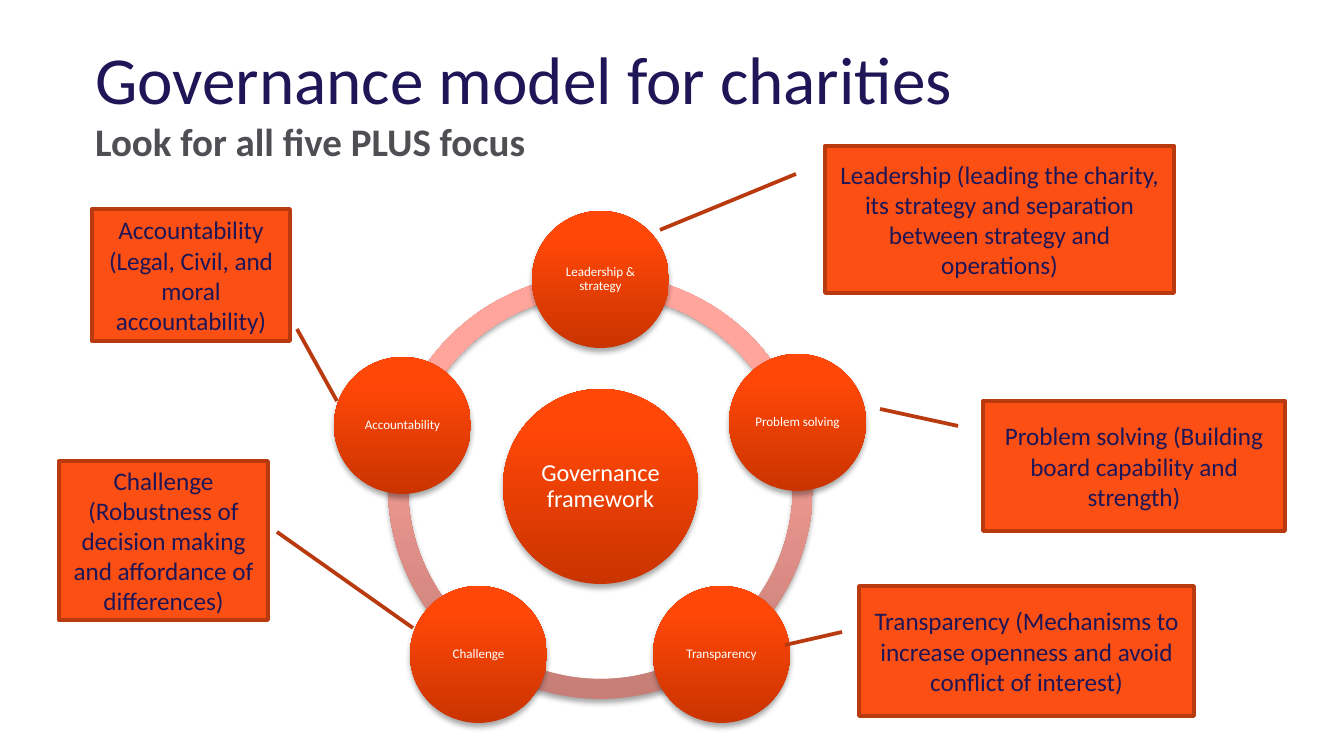
"""Build the charity governance slide: a ring of five circles with callouts."""
from copy import deepcopy
from dataclasses import dataclass

from lxml import etree
from pptx import Presentation
from pptx.dml.color import RGBColor
from pptx.enum.shapes import MSO_SHAPE
from pptx.enum.text import MSO_ANCHOR, PP_ALIGN
from pptx.oxml.ns import qn
from pptx.shapes.autoshape import Shape
from pptx.slide import Slide
from pptx.text.text import TextFrame, _Paragraph
from pptx.util import Emu, Pt

ARC = MSO_SHAPE.BLOCK_ARC
OVAL = MSO_SHAPE.OVAL
CALLOUT = MSO_SHAPE.LINE_CALLOUT_1
MIDDLE = MSO_ANCHOR.MIDDLE
LEFT = PP_ALIGN.LEFT
CENTER = PP_ALIGN.CENTER

SCALE = 914400 / 134.4
WIDE, HIGH = 1344, 756
MID_X, MID_Y = 600, 486
RING, BAND = 425, 20
HUB, NODE = 195, 137
STEP = 72


@dataclass(frozen=True)
class Theme:
    """Colours and type sizes of the slide."""
    font: str = "Calibri"
    navy: str = "1E1656"
    grey: str = "4D4F53"
    white: str = "FFFFFF"
    black: str = "000000"
    orange: str = "FB4F14"
    rust: str = "BA3A0F"
    ball: tuple[str, ...] = ("CA3400", "FF4708", "FF4809")
    band: tuple[str, ...] = ("C67E77", "FFA59C", "FFA69E")
    stops: tuple[float, ...] = (0, 0.8, 1)
    title: float = 36
    lead: float = 20.9
    hub: float = 13
    node: float = 7
    note: float = 13.5
    edge: float = 2


@dataclass(frozen=True)
class Ball:
    """A circle given by its centre, width and label."""
    x: int
    y: int
    size: int
    text: str
    type: float


@dataclass(frozen=True)
class Note:
    """A callout box whose line runs from start to tip."""
    box: tuple[int, int, int, int]
    start: tuple[int, int]
    tip: tuple[int, int]
    text: str


THEME = Theme()

BALLS = (
    Ball(MID_X, MID_Y, HUB, "Governance framework", THEME.hub),
    Ball(600, 279, NODE, "Leadership & strategy", THEME.node),
    Ball(797, 422, NODE, "Problem solving", THEME.node),
    Ball(721, 654, NODE, "Transparency", THEME.node),
    Ball(478, 654, NODE, "Challenge", THEME.node),
    Ball(402, 425, NODE, "Accountability", THEME.node),
)

NOTES = (
    Note((825, 146, 349, 147), (796, 174), (660, 230),
         "Leadership (leading the charity, its strategy and separation "
         "between strategy and operations)"),
    Note((983, 401, 302, 130), (958, 426), (880, 409),
         "Problem solving (Building board capability and strength)"),
    Note((859, 586, 335, 130), (842, 632), (785, 645),
         "Transparency (Mechanisms to increase openness and avoid "
         "conflict of interest)"),
    Note((59, 461, 209, 159), (277, 532), (413, 628),
         "Challenge (Robustness of decision making and affordance of "
         "differences)"),
    Note((92, 209, 198, 132), (297, 329), (337, 401),
         "Accountability (Legal, Civil, and moral accountability)"),
)


def px(count: int) -> Emu:
    """Turn pixels into EMU."""
    return Emu(round(count * SCALE))


def color(code: str) -> RGBColor:
    """Read a hex colour."""
    return RGBColor.from_string(code)


def write(para: _Paragraph, text: str, *, size: float, ink: str,
          bold: bool = False, align: PP_ALIGN = CENTER,
          lines: float = 1.0) -> None:
    """Add one run of text with its format."""
    para.alignment = align
    para.line_spacing = lines
    run = para.add_run()
    run.text = text
    run.font.name = THEME.font
    run.font.size = Pt(size)
    run.font.bold = bold
    run.font.color.rgb = color(ink)


def frame(shape: Shape) -> TextFrame:
    """Return the wrapped, centred text frame of a shape."""
    text = shape.text_frame
    text.word_wrap = True
    text.vertical_anchor = MIDDLE
    return text


def place(slide: Slide, kind: MSO_SHAPE, box: tuple[int, ...]) -> Shape:
    """Add a preset shape without shadow."""
    shape = slide.shapes.add_shape(kind, *map(px, box))
    shape.shadow.inherit = False
    return shape


def gloss(shape: Shape, tones: tuple[str, ...]) -> None:
    """Give a shape a rising gradient and a soft shadow."""
    shape.line.fill.background()
    shape.fill.gradient()
    shape.fill.gradient_angle = 90
    props = shape._element.spPr
    stops = props.find(".//" + qn("a:gsLst"))
    stops.append(deepcopy(stops[-1]))
    for stop, spot, tone in zip(shape.fill.gradient_stops, THEME.stops, tones):
        stop.position = spot
        stop.color.rgb = color(tone)
    shade = etree.SubElement(
        props.find(qn("a:effectLst")), qn("a:outerShdw"),
        blurRad=str(Pt(3.1)), dist=str(Pt(1.8)), dir="5400000", rotWithShape="0")
    tint = etree.SubElement(shade, qn("a:srgbClr"), val=THEME.black)
    etree.SubElement(tint, qn("a:alpha"), val="35000")


def draw_ring(slide: Slide) -> None:
    """Draw the five arcs that join the circles."""
    half = RING // 2
    for turn in range(0, 360, STEP):
        arc = place(slide, ARC, (MID_X - half, MID_Y - half, RING, RING))
        ends = (270 + turn) % 360, (270 + turn + STEP) % 360
        arc.adjustments[0], arc.adjustments[1] = (end * 0.6 for end in ends)
        arc.adjustments[2] = BAND / RING
        gloss(arc, THEME.band)


def draw_ball(slide: Slide, ball: Ball) -> None:
    """Draw a labelled circle."""
    half = ball.size // 2
    shape = place(slide, OVAL,
                  (ball.x - half, ball.y - half, ball.size, ball.size))
    gloss(shape, THEME.ball)
    text = frame(shape)
    text.margin_left = text.margin_right = px(2)
    text.margin_top = text.margin_bottom = px(2)
    write(text.paragraphs[0], ball.text, size=ball.type, ink=THEME.white,
          lines=0.9)


def draw_note(slide: Slide, note: Note) -> None:
    """Draw a callout box with its line."""
    shape = place(slide, CALLOUT, note.box)
    left, top, width, height = note.box
    for i, (x, y) in enumerate((note.start, note.tip)):
        shape.adjustments[2 * i] = (y - top) / height
        shape.adjustments[2 * i + 1] = (x - left) / width
    shape.fill.solid()
    shape.fill.fore_color.rgb = color(THEME.orange)
    shape.line.color.rgb = color(THEME.rust)
    shape.line.width = Pt(THEME.edge)
    write(frame(shape).paragraphs[0], note.text, size=THEME.note,
          ink=THEME.navy)


def draw_title(slide: Slide) -> None:
    """Write the title and the line below it."""
    box = slide.shapes.add_textbox(*map(px, (82, 28, 1161, 146)))
    para = frame(box).paragraphs[0]
    write(para, "Governance model for charities", size=THEME.title,
          ink=THEME.navy, align=LEFT)
    para.add_line_break()
    write(para, "Look for all five PLUS focus", size=THEME.lead,
          ink=THEME.grey, bold=True, align=LEFT)


def main() -> None:
    """Build and save the slide."""
    deck = Presentation()
    deck.slide_width, deck.slide_height = px(WIDE), px(HIGH)
    slide = deck.slides.add_slide(deck.slide_layouts[6])
    draw_title(slide)
    draw_ring(slide)
    for ball in BALLS:
        draw_ball(slide, ball)
    for note in NOTES:
        draw_note(slide, note)
    deck.save("out.pptx")


if __name__ == "__main__":
    main()
